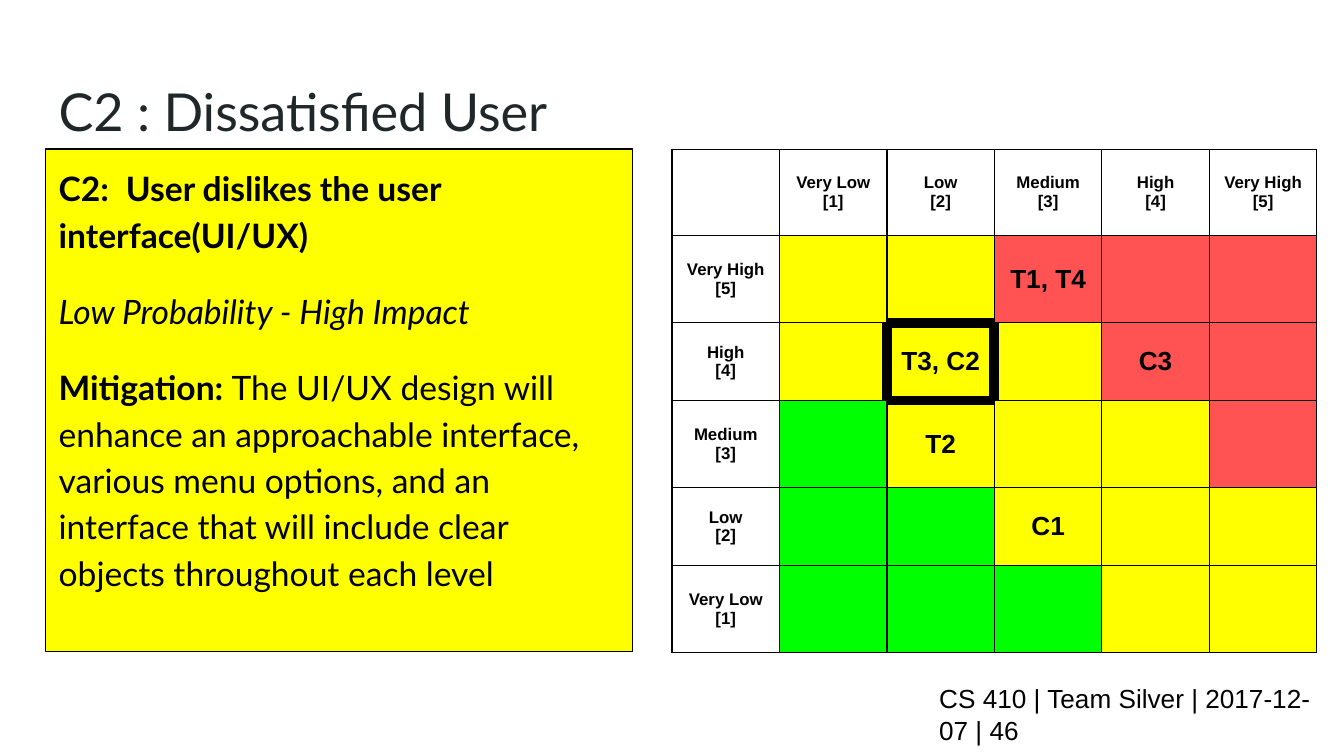
import pptx
import pptx.util
import pptx.dml.color
import pptx.enum.shapes
import pptx.enum.text
import pptx.oxml
import pptx.oxml.ns
import lxml.etree

Cm = pptx.util.Cm
Pt = pptx.util.Pt
RGBColor = pptx.dml.color.RGBColor
Anchor = pptx.enum.text.MSO_ANCHOR
Align = pptx.enum.text.PP_ALIGN

BLACK = RGBColor(0x00, 0x00, 0x00)
INK = RGBColor(0x20, 0x27, 0x29)
YELLOW = RGBColor(0xFF, 0xFF, 0x00)
RED = RGBColor(0xFF, 0x52, 0x52)
GREEN = RGBColor(0x00, 0xFF, 0x00)

INSET = Cm(0.25)
THIN, THICK = 0.75, 6
LEVELS = ["Very Low", "Low", "Medium", "High", "Very High"]
ZONES = ["YYRRR", "YYYRR", "GYYYR", "GGYYY", "GGGYY"]
FILLS = {"Y": YELLOW, "R": RED, "G": GREEN}
RISKS = {(1, 3): "T1, T4", (2, 2): "T3, C2", (2, 4): "C3",
         (3, 2): "T2", (4, 3): "C1"}
FOCUS = (2, 2)
HEIGHTS = [1.63, 1.65, 1.47, 1.65, 1.47, 1.65]
SIDES = {"L": (0, -1), "R": (0, 1), "T": (-1, 0), "B": (1, 0)}


def add_run(para, text, size, font, color=BLACK, bold=False, italic=False):
    run = para.add_run()
    run.text = text
    run.font.size = Pt(size)
    run.font.name = font
    run.font.color.rgb = color
    run.font.bold = bold
    run.font.italic = italic


def set_frame(frame, anchor):
    frame.word_wrap = True
    frame.vertical_anchor = anchor
    frame.margin_left = frame.margin_right = INSET
    frame.margin_top = frame.margin_bottom = INSET


def add_label(slide, box, text, size, font, color, anchor):
    frame = slide.shapes.add_textbox(*box).text_frame
    set_frame(frame, anchor)
    add_run(frame.paragraphs[0], text, size, font, color)


def add_panel(slide, box):
    panel = slide.shapes.add_shape(
        pptx.enum.shapes.MSO_SHAPE.RECTANGLE, *box)
    panel.shadow.inherit = False
    panel.fill.solid()
    panel.fill.fore_color.rgb = YELLOW
    panel.line.color.rgb = BLACK
    panel.line.width = Pt(THIN)
    frame = panel.text_frame
    set_frame(frame, Anchor.TOP)
    paras = [
        [("C2:\tUser dislikes the user interface(UI/UX)", True, False)],
        [("Low Probability - High Impact", False, True)],
        [("Mitigation: ", True, False),
         ("The UI/UX design will enhance an approachable interface, "
          "various menu options, and an interface that will include "
          "clear objects throughout each level", False, False)],
    ]
    for index, runs in enumerate(paras):
        para = frame.add_paragraph() if index else frame.paragraphs[0]
        para.alignment = Align.LEFT
        para.line_spacing = 1.15
        para.space_after = Pt(16)
        for text, bold, italic in runs:
            add_run(para, text, 18, "Lato", BLACK, bold, italic)


def set_border(cell, side, width):
    props = cell._tc.get_or_add_tcPr()
    line = lxml.etree.SubElement(
        props, pptx.oxml.ns.qn("a:ln" + side), w=str(Pt(width)))
    fill = lxml.etree.SubElement(line, pptx.oxml.ns.qn("a:solidFill"))
    lxml.etree.SubElement(
        fill, pptx.oxml.ns.qn("a:srgbClr"), val=str(BLACK))


def fill_cell(cell, row, col):
    cell.vertical_anchor = Anchor.MIDDLE
    cell.margin_left = cell.margin_right = INSET
    cell.margin_top = cell.margin_bottom = INSET
    for side, (down, over) in SIDES.items():
        near = FOCUS in ((row, col), (row + down, col + over))
        set_border(cell, side, THICK if near else THIN)
    if row and col:
        cell.fill.solid()
        cell.fill.fore_color.rgb = FILLS[ZONES[row - 1][col - 1]]
        lines, size = [RISKS.get((row, col))], 14
    else:
        cell.fill.background()
        level = 6 - row if row else col
        lines, size = [LEVELS[level - 1], f"[{level}]"], 9
        if row == col:
            lines = [None]
    for index, text in enumerate(lines):
        frame = cell.text_frame
        para = frame.add_paragraph() if index else frame.paragraphs[0]
        para.alignment = Align.CENTER
        if text:
            add_run(para, text, size, "Arial", bold=True)


def add_matrix(slide, box):
    table = slide.shapes.add_table(6, 6, *box).table
    table.first_row = False
    table.horz_banding = False
    for row, high in enumerate(HEIGHTS):
        table.rows[row].height = Cm(high)
        table.columns[row].width = box[2] // 6
        for col in range(6):
            fill_cell(table.cell(row, col), row, col)


def main():
    deck = pptx.Presentation()
    deck.slide_width = Cm(25.4)
    deck.slide_height = Cm(14.29)
    slide = deck.slides.add_slide(deck.slide_layouts[6])
    add_label(slide, (Cm(0.86), Cm(1.24), Cm(23.67), Cm(1.6)),
              "C2 : Dissatisfied User", 28, "Lato", INK, Anchor.TOP)
    add_label(slide, (Cm(17.5), Cm(12.95), Cm(7.57), Cm(1.09)),
              "CS 410 | Team Silver | 2017-12-07 | 46", 14, "Arial",
              BLACK, Anchor.MIDDLE)
    add_panel(slide, (Cm(0.86), Cm(2.82), Cm(11.1), Cm(9.5)))
    add_matrix(slide, (Cm(12.7), Cm(2.82), Cm(12.19), Cm(sum(HEIGHTS))))
    deck.save("out.pptx")


if __name__ == "__main__":
    main()
